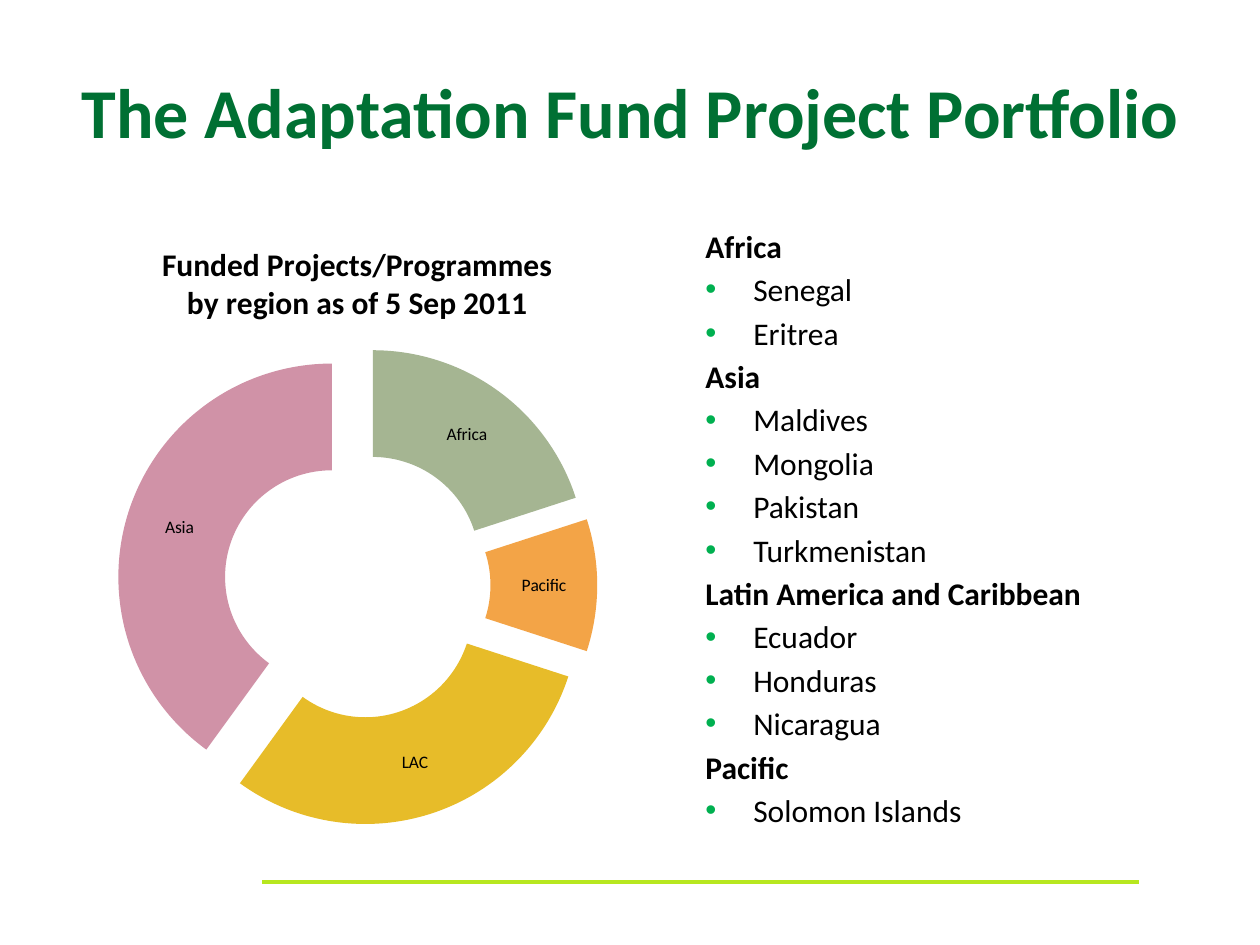
from lxml import etree
from pptx import Presentation
from pptx.chart.data import CategoryChartData
from pptx.dml.color import RGBColor
from pptx.enum import chart as chart_enum, shapes, text
from pptx.oxml import parse_xml
from pptx.oxml.ns import nsdecls, qn
from pptx.util import Inches, Pt


def color(hex_string):
    return RGBColor.from_string(hex_string)


def set_font(font, size, hex_string, bold=False):
    values = {"name": "Calibri", "size": Pt(size), "bold": bold}
    for name, value in values.items():
        setattr(font, name, value)
    font.color.rgb = color(hex_string)


presentation = Presentation()
presentation.slide_width, presentation.slide_height = Inches(10), Inches(7.5)
slide = presentation.slides.add_slide(presentation.slide_layouts[5])

# Title
title = slide.shapes.title
title.left, title.top = Inches(0.5), Inches(0.25)
title.width, title.height = Inches(9), Inches(1.25)
title.text_frame.text = "The Adaptation Fund Project Portfolio"
title.text_frame.vertical_anchor = text.MSO_ANCHOR.MIDDLE
title_paragraph = title.text_frame.paragraphs[0]
title_paragraph.alignment = text.PP_ALIGN.CENTER
set_font(title_paragraph.font, 40, "007033", bold=True)

# Footer rule
rule = slide.shapes.add_connector(
    shapes.MSO_CONNECTOR.STRAIGHT, Inches(2.08), Inches(7), Inches(9.04), Inches(7))
rule.line.color.rgb = color("B7E71F")
rule.line.width = Pt(2)
etree.SubElement(rule._element.spPr, qn("a:effectLst"))

# Doughnut chart: region, share and colour
regions = [
    ("Africa", 20, "A5B592"),
    ("Pacific", 10, "F3A447"),
    ("LAC", 30, "E7BC29"),
    ("Asia", 40, "D092A7"),
]
chart_data = CategoryChartData()
chart_data.categories = [name for name, _, _ in regions]
chart_data.add_series("Series 1", [share for _, share, _ in regions])
chart = slide.shapes.add_chart(
    chart_enum.XL_CHART_TYPE.DOUGHNUT, Inches(0.5), Inches(1.75),
    Inches(4.67), Inches(4.95), chart_data).chart
set_font(chart.font, 10, "000000")
chart.has_legend = False

chart.has_title = True
chart_title = chart.chart_title.text_frame
chart_title.text = "Funded Projects/Programmes\nby region as of 5 Sep 2011"
for paragraph in chart_title.paragraphs:
    set_font(paragraph.font, 18, "000000", bold=True)
chart.chart_title.include_in_layout = False

plot = chart.plots[0]
plot.vary_by_categories = True
plot.has_data_labels = True
labels = plot.data_labels
label_values = {"show_category_name": True, "show_percentage": False,
                "show_value": False, "show_legend_key": False}
for name, value in label_values.items():
    setattr(labels, name, value)
set_font(labels.font, 10, "000000")

series = plot.series[0]
series._element.find(qn("c:tx")).addnext(
    parse_xml(f'<c:explosion {nsdecls("c")} val="25"/>'))
for index, (_, _, fill_color) in enumerate(regions):
    fill = series.points[index].format.fill
    fill.solid()
    fill.fore_color.rgb = color(fill_color)

plot_area = chart._chartSpace.find(".//" + qn("c:plotArea"))
for old_layout in plot_area.findall(qn("c:layout")):
    plot_area.remove(old_layout)
plot_area.insert(0, parse_xml(
    f'<c:layout {nsdecls("c")}><c:manualLayout><c:layoutTarget val="inner"/>'
    '<c:xMode val="edge"/><c:yMode val="edge"/><c:x val="0.09"/><c:y val="0.2"/>'
    '<c:w val="0.82"/><c:h val="0.77"/></c:manualLayout></c:layout>'))

# Countries by region
countries = {
    "Africa": ["Senegal", "Eritrea"],
    "Asia": ["Maldives", "Mongolia", "Pakistan", "Turkmenistan"],
    "Latin America and Caribbean": ["Ecuador", "Honduras", "Nicaragua"],
    "Pacific": ["Solomon Islands"],
}
entries = []
for region, names in countries.items():
    entries.append((region, True))
    entries += [(name, False) for name in names]

country_box = slide.shapes.add_textbox(Inches(5.5), Inches(1.75), Inches(3.42), Inches(4.95))
frame = country_box.text_frame
frame.word_wrap = True
for index, (name, is_region) in enumerate(entries):
    paragraph = frame.add_paragraph() if index else frame.paragraphs[0]
    paragraph.text = name
    properties = paragraph._p.get_or_add_pPr()
    properties.set("marL", str(Inches(0.38)))
    properties.set("indent", str(-Inches(0.38)))
    if not is_region:
        bullet_color = etree.SubElement(properties, qn("a:buClr"))
        etree.SubElement(bullet_color, qn("a:srgbClr"), val="00B050")
        etree.SubElement(properties, qn("a:buFont"), typeface="Arial")
        etree.SubElement(properties, qn("a:buChar"), char="•")
    if index:
        paragraph.space_before = Pt(3.2)
    set_font(paragraph.font, 18, "000000", bold=is_region)

presentation.save("out.pptx")
